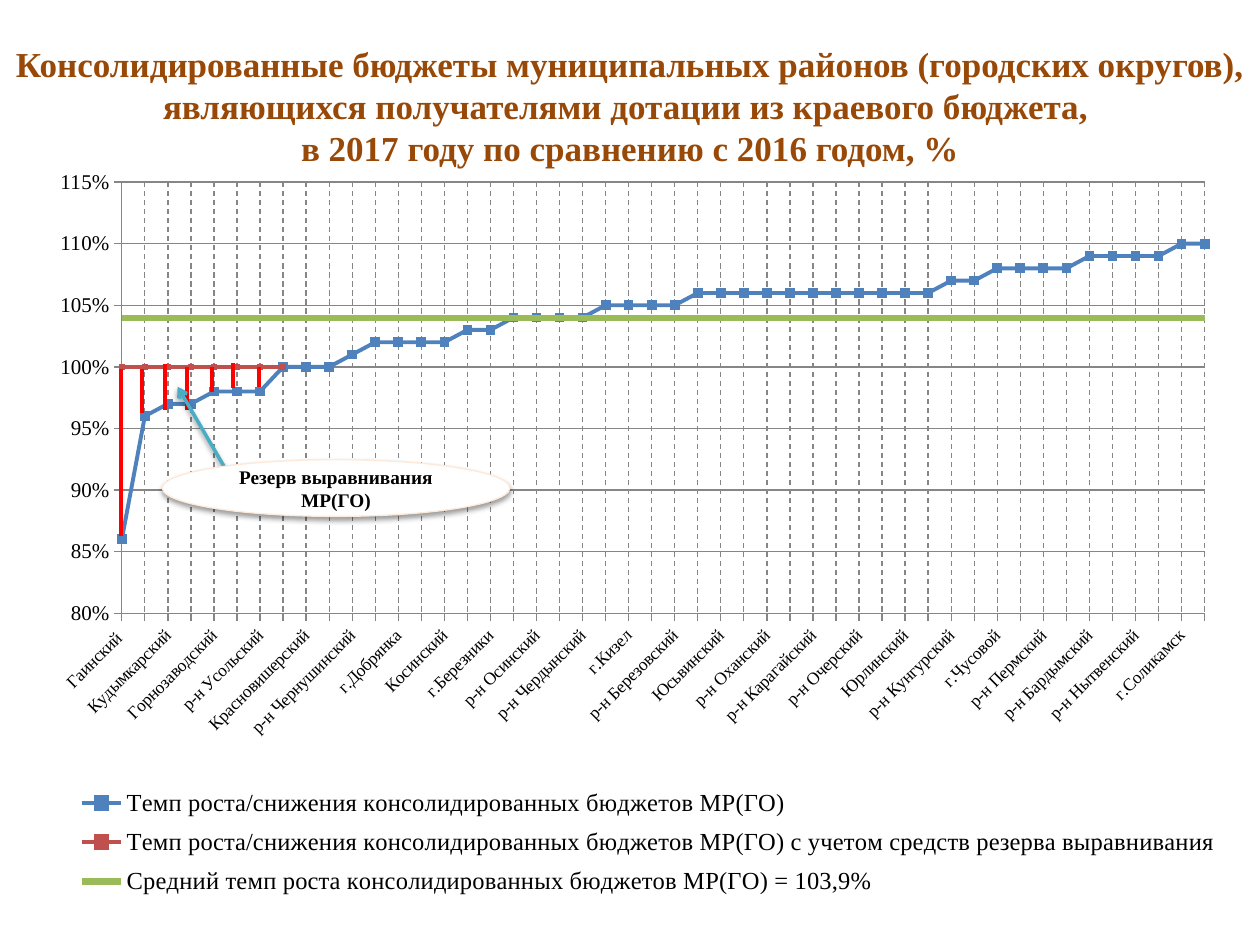
from dataclasses import dataclass

from lxml import etree
from pptx import Presentation
from pptx import util as u
from pptx.chart.data import CategoryChartData
from pptx.dml.color import RGBColor
from pptx.enum import chart as ch, dml, shapes, text
from pptx.oxml.ns import qn

Pt = u.Pt
FACE = "Times New Roman"
WIDE, HIGH = 680, 430
HUES = {
    "title": "984807", "blue": "4F81BD", "red": "C0504D", "green": "9BBB59",
    "gap": "FF0000", "arrow": "4BACC6", "edge": "FDEADA", "white": "FFFFFF",
    "black": "000000", "grid": "868686",
}
TITLE = ("Консолидированные бюджеты муниципальных районов (городских округов), "
         "являющихся получателями дотации из краевого бюджета, \v"
         "в 2017 году по сравнению с 2016 годом, %")
TOWNS = (
    "Гаинский ,г.Краснокамск,Кудымкарский,р-н Б-Сосновский,Горнозаводский,"
    "г.Губаха,р-н Усольский,г.Кунгур,Красновишерский,ЗАТО Звездный,"
    "р-н Чернушинский,р-н Октябрьский,г.Добрянка,р-н Ильинский,Косинский,"
    "г.Пермь,г.Березники,Кочевский,р-н Осинский,Кудымкар ГО,р-н Чердынский,"
    "г.Александровск,г.Кизел,р-н Кишертский,р-н Березовский,р-н Ординский,"
    "Юсьвинский,г.Гремячинск,р-н Оханский,г.Лысьва,р-н Карагайский,"
    "р-н Верещагинский,р-н Очерский,р-н Частинский,Юрлинский,р-н Суксунский,"
    "р-н Кунгурский,р-н Еловский,г.Чусовой,р-н Куединский,р-н Пермский,"
    "р-н Сивинский,р-н Бардымский,р-н Соликамский,р-н Нытвенский,г.Чайковский,"
    "г.Соликамск,р-н Уинский"
).split(",")
RATES = ([0.86, 0.96] + [0.97] * 2 + [0.98] * 3 + [1] * 3 + [1.01] + [1.02] * 4
         + [1.03] * 2 + [1.04] * 4 + [1.05] * 4 + [1.06] * 11 + [1.07] * 2
         + [1.08] * 4 + [1.09] * 4 + [1.1] * 2)


@dataclass
class Trend:
    name: str
    vals: list
    hue: str
    width: float
    mark: int


@dataclass
class Rule:
    x: float
    top: float
    end: float


@dataclass
class Box:
    x: float
    y: float
    w: float
    h: float


TRENDS = [
    Trend("Темп роста/снижения консолидированных бюджетов МР(ГО) ",
          RATES, "blue", 2.25, 5),
    Trend("Темп роста/снижения консолидированных бюджетов МР(ГО) "
          "с учетом средств резерва выравнивания",
          [1] * 8 + [None] * (len(TOWNS) - 8), "red", 2.25, 3),
    Trend("Средний темп роста консолидированных бюджетов МР(ГО) = 103,9%",
          [1.04] * len(TOWNS), "green", 3.5, 0),
]
GAPS = [
    Rule(69.3, 211, 306.5), Rule(81.2, 211, 236), Rule(94.5, 208, 234),
    Rule(106.8, 209.5, 234), Rule(121, 209.5, 224), Rule(133.2, 207.5, 222),
    Rule(147.8, 209.5, 221),
]
PLOT = Box(49.6, 14.8, 618.8, 246.4)
KEY = Box(21.6, 355, 658, 74)


def tone(hue: str) -> RGBColor:
    return RGBColor.from_string(HUES[hue])


def ink(font, size: float, hue: str = "black", bold: bool = False) -> None:
    font.name, font.size, font.bold = FACE, Pt(size), bold
    font.color.rgb = tone(hue)


def pen(line, hue: str, width: float) -> None:
    line.color.rgb = tone(hue)
    line.width = Pt(width)


def node(tag: str, **attrs):
    item = etree.Element(qn(tag))
    for key, val in attrs.items():
        item.set(key, str(val))
    return item


def shade(shape, cast: bool) -> None:
    props = shape._element.spPr
    for old in props.findall(qn("a:effectLst")):
        props.remove(old)
    fx = node("a:effectLst")
    if cast:
        drop = node("a:outerShdw", blurRad=Pt(3.1), dist=Pt(1.6),
                    dir=5400000, rotWithShape=0)
        dye = node("a:srgbClr", val=HUES["black"])
        dye.append(node("a:alpha", val=38000))
        drop.append(dye)
        fx.append(drop)
    props.append(fx)


def place(host, spot: int, box: Box, inner: bool = False) -> None:
    for old in host.findall(qn("c:layout")):
        host.remove(old)
    frame, hand = node("c:layout"), node("c:manualLayout")
    if inner:
        hand.append(node("c:layoutTarget", val="inner"))
    for key in ("xMode", "yMode"):
        hand.append(node("c:" + key, val="edge"))
    parts = (box.x / WIDE, box.y / HIGH, box.w / WIDE, box.h / HIGH)
    for key, val in zip("xywh", parts):
        hand.append(node("c:" + key, val=val))
    frame.append(hand)
    host.insert(spot, frame)


def style_axes(chart) -> None:
    base, side = chart.category_axis, chart.value_axis
    side.minimum_scale, side.maximum_scale, side.major_unit = 0.8, 1.15, 0.05
    side.tick_labels.number_format = "0%"
    side.tick_labels.number_format_is_linked = False
    for axis, size in ((base, 10), (side, 12)):
        axis.has_major_gridlines = True
        axis.major_tick_mark = ch.XL_TICK_MARK.OUTSIDE
        pen(axis.major_gridlines.format.line, "grid", 0.75)
        pen(axis.format.line, "grid", 0.75)
        ink(axis.tick_labels.font, size)
    base.major_gridlines.format.line.dash_style = dml.MSO_LINE.DASH
    root = chart.element
    cat, val = (root.find(".//" + qn(tag)) for tag in ("c:catAx", "c:valAx"))
    cat.find(qn("c:txPr")).find(qn("a:bodyPr")).set("rot", "-2700000")
    cat.find(qn("c:noMultiLvlLbl")).addprevious(node("c:tickLblSkip", val=2))
    for old in val.findall(qn("c:crossBetween")):
        val.remove(old)
    val.find(qn("c:crosses")).addnext(node("c:crossBetween", val="midCat"))


def draw_chart(slide) -> None:
    data = CategoryChartData(number_format="0%")
    data.categories = TOWNS
    for trend in TRENDS:
        data.add_series(trend.name, trend.vals)
    chart = slide.shapes.add_chart(
        ch.XL_CHART_TYPE.LINE_MARKERS, Pt(20), Pt(89.3), Pt(WIDE), Pt(HIGH), data).chart
    ink(chart.font, 10)
    chart.has_title = False
    chart.plots[0].vary_by_categories = False
    for line, trend in zip(chart.plots[0].series, TRENDS):
        line.smooth = False
        pen(line.format.line, trend.hue, trend.width)
        if not trend.mark:
            line.marker.style = ch.XL_MARKER_STYLE.NONE
            continue
        line.marker.style = ch.XL_MARKER_STYLE.SQUARE
        line.marker.size = trend.mark
        line.marker.format.fill.solid()
        line.marker.format.fill.fore_color.rgb = tone(trend.hue)
        pen(line.marker.format.line, trend.hue, 0.75)
    style_axes(chart)
    chart.has_legend = True
    chart.legend.position = ch.XL_LEGEND_POSITION.RIGHT
    chart.legend.include_in_layout = False
    ink(chart.legend.font, 14)
    root = chart.element
    place(root.find(".//" + qn("c:plotArea")), 0, PLOT, True)
    place(root.find(".//" + qn("c:legend")), 1, KEY)


def draw_line(group, x1: float, y1: float, x2: float, y2: float,
              hue: str, width: float, cast: bool = False):
    line = group.shapes.add_connector(
        shapes.MSO_CONNECTOR.STRAIGHT, Pt(x1), Pt(y1), Pt(x2), Pt(y2))
    pen(line.line, hue, width)
    shade(line, cast)
    return line


def set_text(shape, words: str, size: float, hue: str) -> None:
    frame = shape.text_frame
    frame.text = words
    frame.word_wrap, frame.auto_size = True, text.MSO_AUTO_SIZE.NONE
    frame.vertical_anchor = text.MSO_ANCHOR.MIDDLE
    frame.paragraphs[0].alignment = text.PP_ALIGN.CENTER
    for run in frame.paragraphs[0].runs:
        ink(run.font, size, hue, True)


def draw_note(slide) -> None:
    note = slide.shapes.add_shape(
        shapes.MSO_SHAPE.OVAL, Pt(92.7), Pt(262.7), Pt(198.7), Pt(32.4))
    note.fill.solid()
    note.fill.fore_color.rgb = tone("white")
    pen(note.line, "edge", 0.75)
    shade(note, True)
    set_text(note, "Резерв выравнивания МР(ГО)", 11, "black")


def draw_title(slide) -> None:
    title = slide.shapes.title
    title.left, title.top, title.width, title.height = Pt(0), Pt(26.2), Pt(720), Pt(68)
    set_text(title, TITLE, 20, "title")


def main() -> None:
    deck = Presentation()
    deck.slide_width, deck.slide_height = Pt(720), Pt(540)
    slide = deck.slides.add_slide(deck.slide_layouts[5])
    draw_chart(slide)
    draw_title(slide)
    group = slide.shapes.add_group_shape()
    for gap in GAPS:
        draw_line(group, gap.x, gap.top, gap.x, gap.end, "gap", 2.25)
    arrow = draw_line(group, 133, 275, 101.5, 221, "arrow", 2, True)
    arrow.line._get_or_add_ln().append(node("a:tailEnd", type="arrow"))
    draw_note(slide)
    deck.save("out.pptx")


if __name__ == "__main__":
    main()
